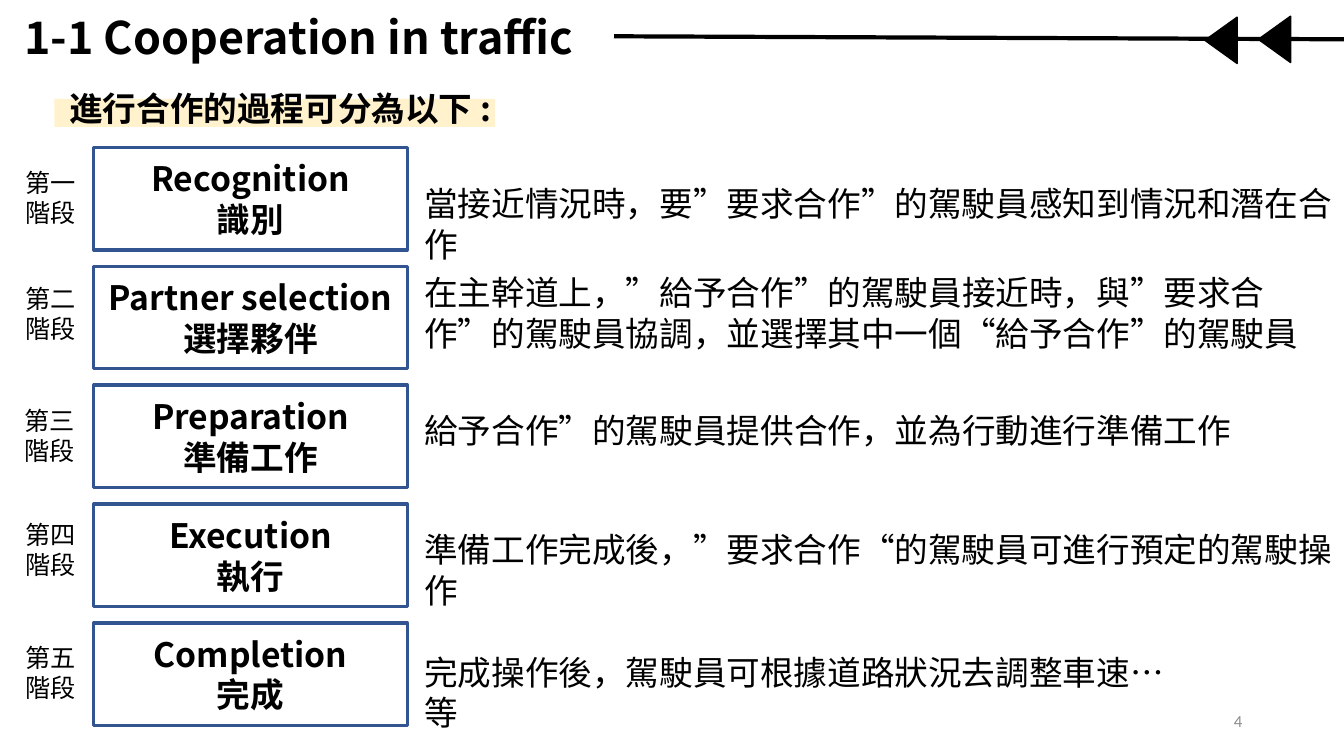
import pptx
import pptx.util
from lxml import etree
from pptx.dml.color import RGBColor
from pptx.enum.shapes import MSO_CONNECTOR, MSO_SHAPE
from pptx.enum.text import MSO_ANCHOR, MSO_AUTO_SIZE, PP_ALIGN
from pptx.oxml.ns import qn
from pptx.util import Inches, Pt

BLACK = RGBColor(0x00, 0x00, 0x00)
GRAY = RGBColor(0x8C, 0x8C, 0x8C)
BLUE = RGBColor(0x32, 0x54, 0x91)
CREAM = RGBColor(0xFF, 0xF2, 0xCC)
MAIN_FONT = "Noto Sans CJK SC"

TITLE = "1-1 Cooperation in traffic"
SUBTITLE = "進行合作的過程可分為以下 :"
PAGE_NUMBER = "4"

# stage label, its frame, names, description, its frame
STAGES = [
    ("第一階段", (0.11, 1.61, 0.79, 0.71), ("Recognition", "識別"),
     "當接近情況時，要”要求合作”的駕駛員感知到情況和潛在合作", (4.11, 1.77, 9.36, 0.5)),
    ("第二階段", (0.11, 2.76, 0.79, 0.71), ("Partner selection", "選擇夥伴"),
     "在主幹道上，”給予合作”的駕駛員接近時，與”要求合作”的駕駛員協調，並選擇其中一個“給予合作”的駕駛員",
     (4.11, 2.65, 8.99, 0.91)),
    ("第三階段", (0.11, 3.97, 0.77, 0.71), ("Preparation", "準備工作"),
     "給予合作”的駕駛員提供合作，並為行動進行準備工作", (4.11, 4.02, 8.42, 0.5)),
    ("第四階段", (0.12, 5.1, 0.77, 0.71), ("Execution", "執行"),
     "準備工作完成後，”要求合作“的駕駛員可進行預定的駕駛操作", (4.11, 5.2, 9.2, 0.5)),
    ("第五階段", (0.12, 6.32, 0.76, 0.71), ("Completion", "完成"),
     "完成操作後，駕駛員可根據道路狀況去調整車速…等", (4.11, 6.42, 7.84, 0.5)),
]
STAGE_TOP, STAGE_PITCH = 1.46, 1.18
ARROWS = [(12.41, 0.23), (11.88, 0.24)]


def frame(values):
    """Turn a left, top, width, height tuple into lengths."""
    return [Inches(value) for value in values]


def write(shape, lines, size, bold=False, color=BLACK, font=MAIN_FONT, wrap=True,
          anchor=MSO_ANCHOR.TOP, align=PP_ALIGN.LEFT, spacing=1.0):
    """Fill a shape with one formatted paragraph per line."""
    text = shape.text_frame
    frame_format = {"word_wrap": wrap, "vertical_anchor": anchor,
                    "auto_size": MSO_AUTO_SIZE.NONE}
    for name, value in frame_format.items():
        setattr(text, name, value)
    for index, line in enumerate(lines):
        para = text.add_paragraph() if index else text.paragraphs[0]
        para.alignment = align
        para.line_spacing = spacing
        span = para.add_run()
        span.text = line
        for name, value in {"size": Pt(size), "bold": bold, "name": font}.items():
            setattr(span.font, name, value)
        span.font.color.rgb = color
        latin = span.font._element.find(qn("a:latin"))
        east_asian = etree.Element(qn("a:ea"), typeface=font)
        latin.addnext(east_asian)


def add_box(page, place, lines, size, **style):
    """Add a text box."""
    write(page.shapes.add_textbox(*frame(place)), lines, size, **style)


def add_block(page, kind, place, fill=None, line=None, width=1):
    """Add a flat preset shape."""
    block = page.shapes.add_shape(kind, *frame(place))
    block.shadow.inherit = False
    if fill is None:
        block.fill.background()
    else:
        block.fill.solid()
        block.fill.fore_color.rgb = fill
    if line is None:
        block.line.fill.background()
    else:
        block.line.color.rgb = line
        block.line.width = Pt(width)
    return block


def add_header(page):
    """Add the title, its rule with arrows, and the subtitle."""
    rule = page.shapes.add_connector(
        MSO_CONNECTOR.STRAIGHT, *frame((13.33, 0.39, 6.09, 0.36)))
    rule.line.color.rgb = BLACK
    rule.line.width = Pt(3)
    etree.SubElement(rule._element.spPr, qn("a:effectLst"))
    for left, top in ARROWS:
        arrow = add_block(page, MSO_SHAPE.ISOSCELES_TRIANGLE,
                          (left, top, 0.46, 0.32), BLACK, BLACK)
        arrow.rotation = 270
    title = page.shapes.title
    title.left, title.top, title.width, title.height = frame((0.14, 0.04, 5.95, 0.64))
    write(title, [TITLE], 32, bold=True, wrap=False, anchor=MSO_ANCHOR.MIDDLE)
    add_block(page, MSO_SHAPE.RECTANGLE, (0.54, 0.98, 4.37, 0.28), CREAM)
    add_box(page, (0.54, 0.62, 4.37, 0.64), [SUBTITLE], 24, bold=True,
            align=PP_ALIGN.CENTER, spacing=1.5)


def main():
    """Build the slide on the five stages of cooperation."""
    deck = pptx.Presentation()
    deck.slide_width, deck.slide_height = Inches(13.33), Inches(7.5)
    page = deck.slides.add_slide(deck.slide_layouts[5])
    add_header(page)
    for index, (label, label_place, names, description, place) in enumerate(STAGES):
        add_box(page, label_place, [label], 18, align=PP_ALIGN.CENTER)
        top = STAGE_TOP + index * STAGE_PITCH
        card = add_block(page, MSO_SHAPE.RECTANGLE, (0.93, top, 3.11, 1.02),
                         line=BLUE, width=2.25)
        write(card, names, 24, bold=True, wrap=False, anchor=MSO_ANCHOR.MIDDLE,
              align=PP_ALIGN.CENTER)
        add_box(page, place, [description], 24)
    add_box(page, (9.42, 6.95, 3, 0.4), [PAGE_NUMBER], 12, color=GRAY, font="Calibri",
            anchor=MSO_ANCHOR.MIDDLE, align=PP_ALIGN.RIGHT)
    deck.save("out.pptx")


if __name__ == "__main__":
    main()
